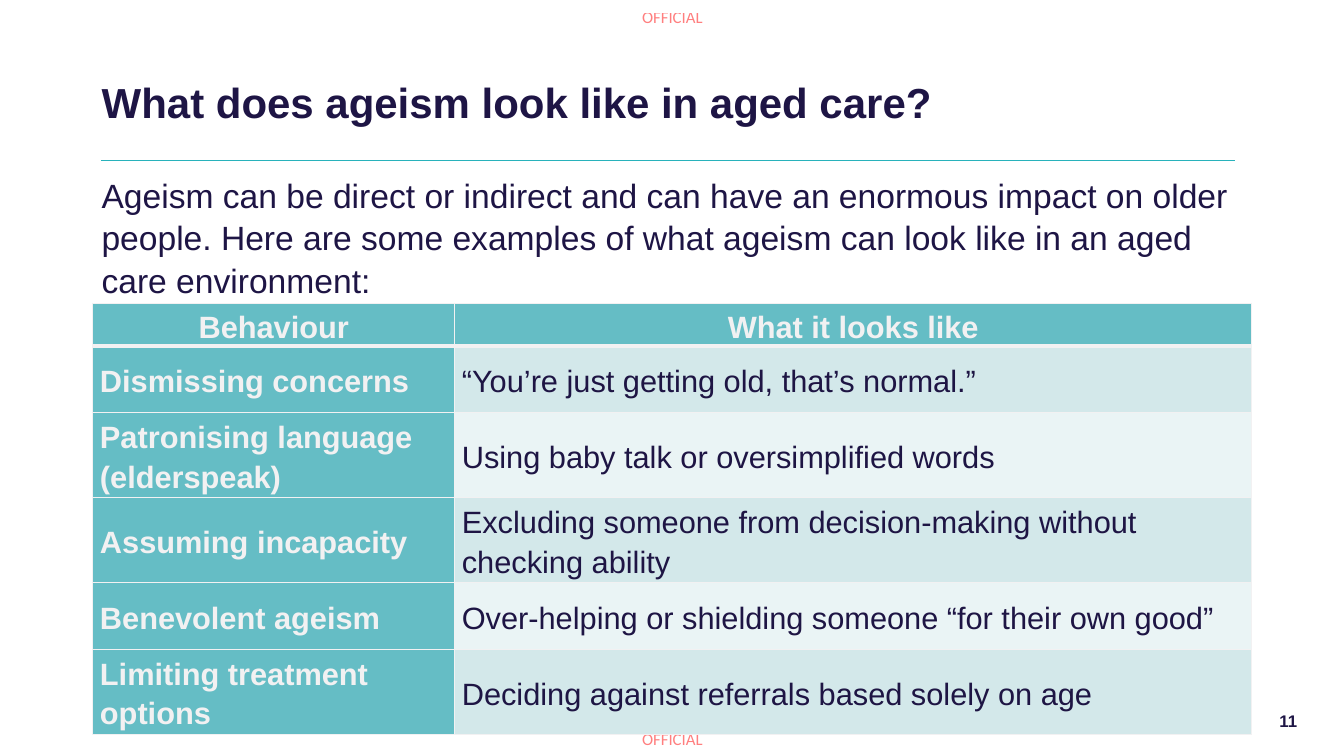
import pptx
import pptx.util
import pptx.dml.color
import pptx.enum.shapes
import pptx.enum.text
import pptx.oxml
import pptx.oxml.ns

Cm, Pt = pptx.util.Cm, pptx.util.Pt
ALIGN = pptx.enum.text.PP_ALIGN
MIDDLE = pptx.enum.text.MSO_ANCHOR.MIDDLE

# Content
TITLE = "What does ageism look like in aged care?"
INTRO = ("Ageism can be direct or indirect and can have an enormous impact on "
         "older people. Here are some examples of what ageism can look like in "
         "an aged care environment:")
MARK = "OFFICIAL"
PAGE = "11"
ROWS = [
    ("Behaviour", "What it looks like"),
    ("Dismissing concerns", "“You’re just getting old, that’s normal.”"),
    ("Patronising language (elderspeak)", "Using baby talk or oversimplified words"),
    ("Assuming incapacity",
     "Excluding someone from decision-making without checking ability"),
    ("Benevolent ageism", "Over-helping or shielding someone “for their own good”"),
    ("Limiting treatment options", "Deciding against referrals based solely on age"),
]
WIDTHS = (9.12, 20.09)
HEIGHTS = (0.97, 1.68, 2.03, 2.03, 1.68, 2.03)
NAVY, TEAL, PALE, RULE = "1E1545", "65BDC5", "F2F1F2", "28B2BB"
BANDS = ("EAF4F5", "D3E8EA")


def paint(hue):
    return pptx.dml.color.RGBColor.from_string(hue)


def write(frame, text, size=24, font="Arial", hue=NAVY, bold=False,
          align=ALIGN.LEFT, line=None, before=0, after=0, alpha=None):
    para = frame.paragraphs[0]
    para.alignment = align
    para.line_spacing = line
    para.space_before, para.space_after = Pt(before), Pt(after)
    run = para.add_run()
    run.text = text
    run.font.size, run.font.name, run.font.bold = Pt(size), font, bold
    run.font.color.rgb = paint(hue)
    if alpha:
        tint = run.font.fill._xPr.find(".//" + pptx.oxml.ns.qn("a:srgbClr"))
        tint.append(pptx.oxml.parse_xml(
            f'<a:alpha {pptx.oxml.ns.nsdecls("a")} val="{alpha * 1000}"/>'))


def label(text, left, top, width, height, pad=None, wrap=True, **style):
    frame = slide.shapes.add_textbox(
        Cm(left), Cm(top), Cm(width), Cm(height)).text_frame
    frame.word_wrap = wrap
    frame.vertical_anchor = MIDDLE
    if pad is not None:
        frame.margin_left = frame.margin_right = Cm(pad)
        frame.margin_top = frame.margin_bottom = Cm(pad)
    write(frame, text, **style)


def edge(cell, thick):
    """Draw the four sides of a cell; thick maps a side to its points."""
    props = cell._tc.get_or_add_tcPr()
    for spot, side in enumerate("LRTB"):
        props.insert(spot, pptx.oxml.parse_xml(
            f'<a:ln{side} {pptx.oxml.ns.nsdecls("a")} w="{Pt(thick.get(side, 1))}">'
            f'<a:solidFill><a:srgbClr val="{PALE}"/></a:solidFill></a:ln{side}>'))


deck = pptx.Presentation()
deck.slide_width, deck.slide_height = Cm(33.87), Cm(19.05)
slide = deck.slides.add_slide(deck.slide_layouts[5])

# Security marks, top and bottom
for top in (0.18, 18.36):
    label(MARK, 16.18, top, 1.63, 0.51, pad=0, wrap=False,
          size=12, font="Calibri", hue="FF0000", alpha=50)

# Title and rule
head = slide.shapes.title
head.left, head.top, head.width, head.height = Cm(2.31), Cm(1.88), Cm(28.63), Cm(1.52)
head.text_frame.vertical_anchor = MIDDLE
write(head.text_frame, TITLE, size=30, bold=True, line=0.9, before=18, after=12)
rule = slide.shapes.add_connector(
    pptx.enum.shapes.MSO_CONNECTOR.STRAIGHT, Cm(2.54), Cm(4.04), Cm(31.12), Cm(4.04))
rule.line.color.rgb, rule.line.width = paint(RULE), Pt(1)
rule._element.spPr.append(pptx.oxml.parse_xml(
    f'<a:effectLst {pptx.oxml.ns.nsdecls("a")}/>'))

# Introduction and page number
label(INTRO, 2.31, 4.29, 29.21, 3.33, line=1.05)
label(PAGE, 31.8, 17.65, 1.14, 1.02, size=12, bold=True, align=ALIGN.RIGHT)

# Table of behaviours
grid = slide.shapes.add_table(
    len(ROWS), len(WIDTHS), Cm(2.34), Cm(7.65), Cm(sum(WIDTHS)), Cm(sum(HEIGHTS))).table
grid.first_col = True
for col, width in zip(grid.columns, WIDTHS):
    col.width = Cm(width)
for r, (texts, height) in enumerate(zip(ROWS, HEIGHTS)):
    grid.rows[r].height = Cm(height)
    for c, text in enumerate(texts):
        cell = grid.cell(r, c)
        strong = r == 0 or c == 0
        cell.fill.solid()
        cell.fill.fore_color.rgb = paint(TEAL if strong else BANDS[r % 2])
        cell.vertical_anchor = MIDDLE
        cell.margin_left = cell.margin_right = Cm(0.18)
        cell.margin_top = cell.margin_bottom = 0
        edge(cell, {"B": 3} if r == 0 else {"T": 3} if r == 1 else {})
        write(cell.text_frame, text, size=22, bold=strong,
              hue=PALE if strong else "1E1544", line=1.15, before=6, after=6,
              align=ALIGN.LEFT if r else ALIGN.CENTER)

deck.save("out.pptx")
